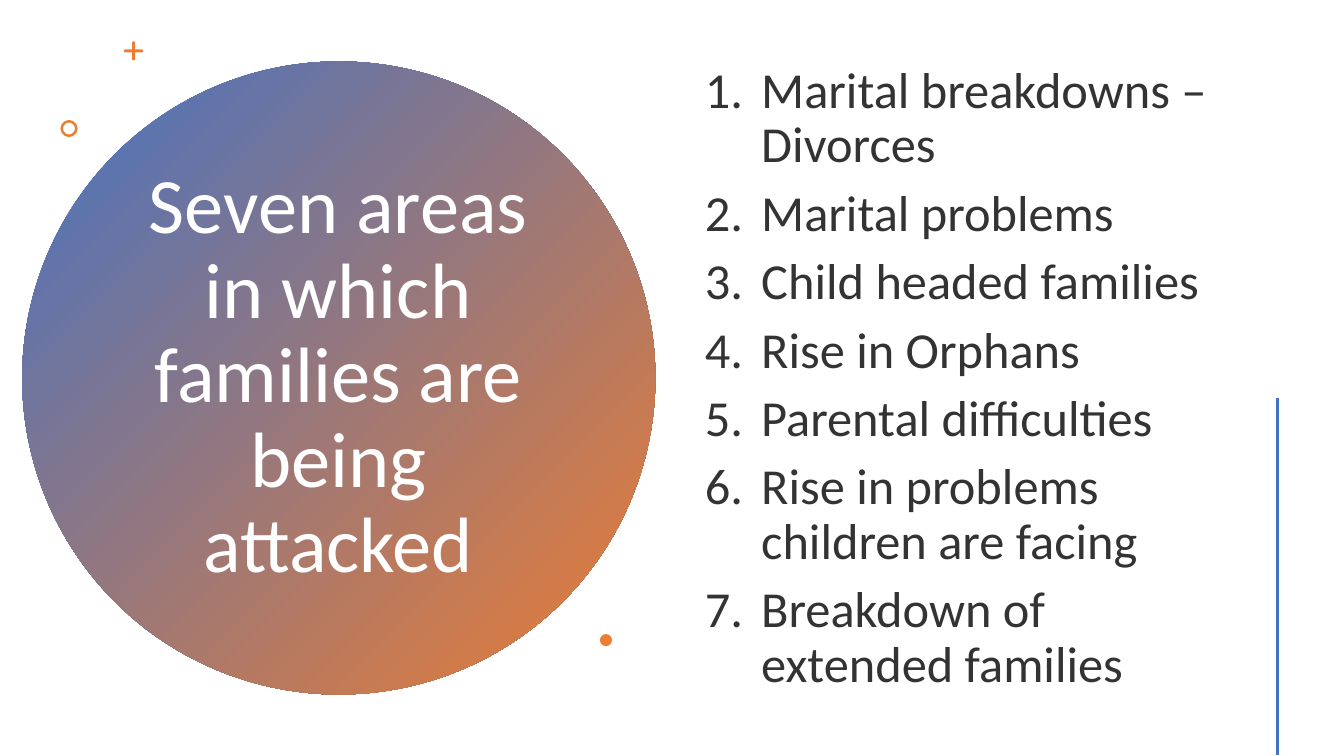
import lxml.etree
import pptx
import pptx.dml.color
import pptx.enum.shapes
import pptx.enum.text
import pptx.oxml.ns
import pptx.util

Inches = pptx.util.Inches
SHAPES = pptx.enum.shapes.MSO_SHAPE
BLUE, ORANGE, WHITE, CHARCOAL = "4472C4", "ED7D31", "FFFFFF", "333333"

AREAS = [
    "Marital breakdowns – Divorces",
    "Marital problems",
    "Child headed families",
    "Rise in Orphans",
    "Parental difficulties",
    "Rise in problems children are facing",
    "Breakdown of extended families",
]


def rgb(color):
    return pptx.dml.color.RGBColor.from_string(color)


def write(paragraph, text, *, size, color, align, before=0):
    run = paragraph.add_run()
    run.text = text
    run.font.name = "Calibri"
    run.font.size = pptx.util.Pt(size)
    run.font.color.rgb = rgb(color)
    paragraph.alignment = align
    paragraph.line_spacing = 0.9
    paragraph.space_before = pptx.util.Pt(before)


prs = pptx.Presentation()
prs.slide_width, prs.slide_height = Inches(13.33), Inches(7.5)
slide = prs.slides.add_slide(prs.slide_layouts[1])
heading, areas = slide.placeholders

# Placeholders
for holder, box in ((heading, (1.36, 1.41, 3.99, 4.67)), (areas, (6.89, 0.57, 5.22, 6.38))):
    holder.left, holder.top, holder.width, holder.height = map(Inches, box)
    holder.text_frame.word_wrap = True
    holder.text_frame.auto_size = pptx.enum.text.MSO_AUTO_SIZE.NONE
    holder.text_frame.vertical_anchor = pptx.enum.text.MSO_ANCHOR.MIDDLE

write(heading.text_frame.paragraphs[0], "Seven areas in which families are being attacked",
      size=56, color=WHITE, align=pptx.enum.text.PP_ALIGN.CENTER)

# Numbered list
for index, area in enumerate(AREAS):
    frame = areas.text_frame
    item = frame.add_paragraph() if index else frame.paragraphs[0]
    write(item, area, size=36, color=CHARCOAL, align=pptx.enum.text.PP_ALIGN.LEFT, before=10)
    properties = item._p.get_or_add_pPr()
    properties.set("marL", str(Inches(0.56)))
    properties.set("indent", str(Inches(-0.56)))
    lxml.etree.SubElement(properties, pptx.oxml.ns.qn("a:buFont"), typeface="+mj-lt")
    lxml.etree.SubElement(properties, pptx.oxml.ns.qn("a:buAutoNum"), type="arabicPeriod")

# Gradient circle behind the title
circle = slide.shapes.add_shape(SHAPES.OVAL, *map(Inches, (0.22, 0.61, 6.28, 6.28)))
circle.shadow.inherit = False
circle.line.fill.background()
circle.fill.gradient()
circle.fill.gradient_angle = 315
for stop, color, position in zip(circle.fill.gradient_stops, (BLUE, ORANGE), (0, 1)):
    stop.color.rgb = rgb(color)
    stop.position = position
heading._element.addprevious(circle._element)

# Orange accents: plus sign (two bars), ring, dot
for preset, box, adjustment in (
    (SHAPES.ROUNDED_RECTANGLE, (1.23, 0.49, 0.19, 0.03), 0.5),
    (SHAPES.ROUNDED_RECTANGLE, (1.31, 0.41, 0.03, 0.19), 0.5),
    (SHAPES.DONUT, (0.6, 1.19, 0.17, 0.17), 0.15),
    (SHAPES.OVAL, (5.95, 6.29, 0.12, 0.12), None),
):
    accent = slide.shapes.add_shape(preset, *map(Inches, box))
    accent.shadow.inherit = False
    accent.line.fill.background()
    accent.fill.solid()
    accent.fill.fore_color.rgb = rgb(ORANGE)
    if adjustment is not None:
        accent.adjustments[0] = adjustment

# Vertical rule at the right
rule = slide.shapes.add_connector(pptx.enum.shapes.MSO_CONNECTOR.STRAIGHT,
                                  *map(Inches, (12.67, 3.95, 12.67, 7.49)))
rule.line.color.rgb = rgb(BLUE)
rule.line.width = pptx.util.Pt(2)
lxml.etree.SubElement(rule._element.spPr, pptx.oxml.ns.qn("a:effectLst"))

prs.save("out.pptx")
